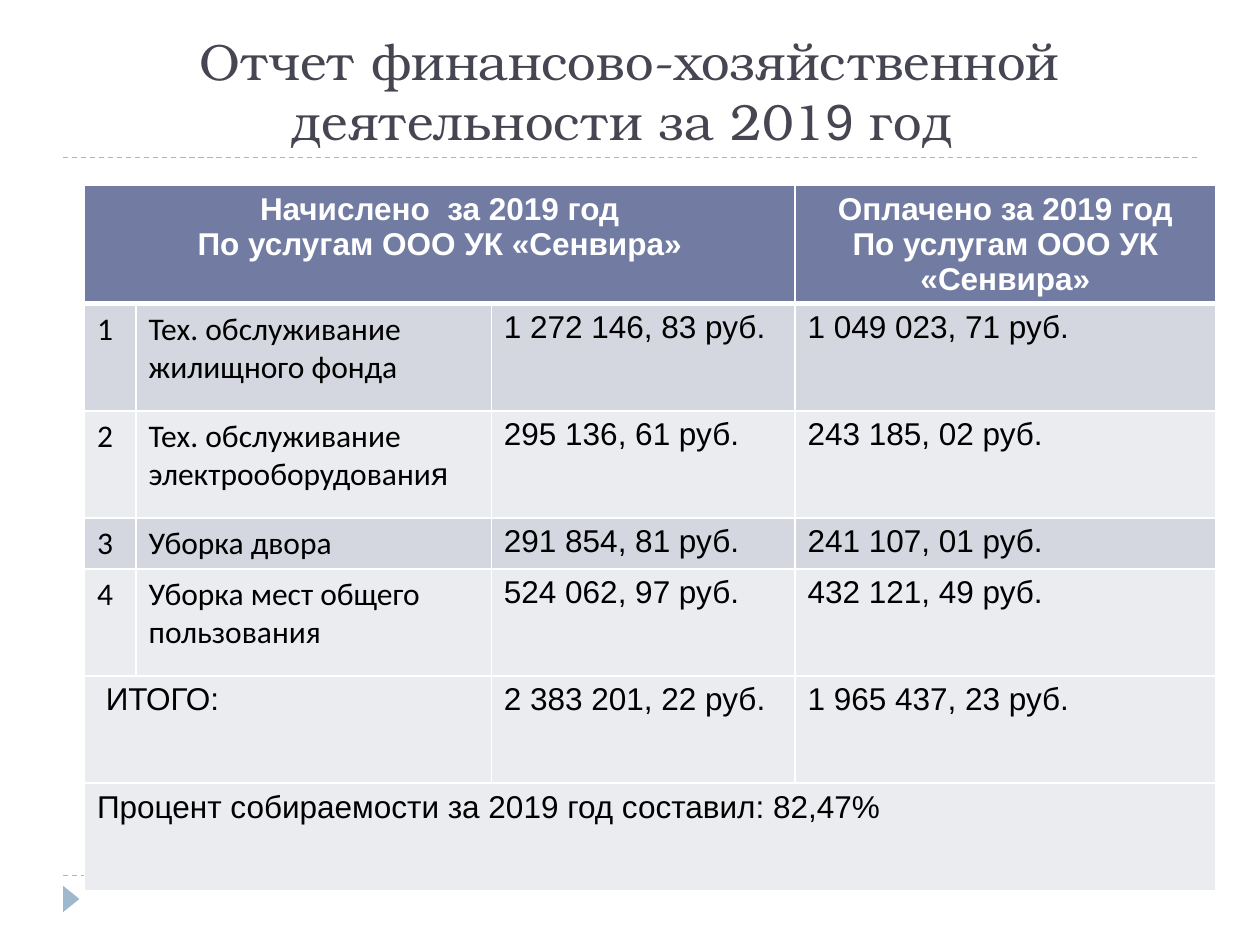
from dataclasses import dataclass

from lxml.etree import SubElement
from pptx import Presentation
from pptx.dml.color import RGBColor
from pptx.enum.dml import MSO_LINE
from pptx.enum.shapes import MSO_CONNECTOR, MSO_SHAPE
from pptx.enum.text import MSO_ANCHOR, MSO_AUTO_SIZE, PP_ALIGN
from pptx.oxml.ns import qn
from pptx.util import Inches, Pt


@dataclass(frozen=True)
class Theme:
    """Colours, fonts and type sizes of the slide."""
    ink: str = "464653"
    accent: str = "9FB8CD"
    header: str = "727CA3"
    band_dark: str = "D5D7E0"
    band_light: str = "EBECF0"
    white: str = "FFFFFF"
    black: str = "000000"
    title_font: str = "TeX Gyre Bonum"
    figure_font: str = "Arial"
    label_font: str = "Calibri"
    title_size: float = 29
    table_size: float = 18
    rule_width: float = 0.75
    border: float = 1
    header_border: float = 3


THEME = Theme()
COLUMNS = [0.41, 2.82, 2.41, 3.34]
ROWS = [0.59, 0.85, 0.85, 0.37, 0.85, 0.85, 0.85]
COMPANY = "По услугам ООО УК «Сенвира»"
TITLE = [
    ("Отчет финансово-хозяйственной деятельности за 201", THEME.title_font),
    ("9", THEME.figure_font),
    (" год ", THEME.title_font),
]
SERVICES = [
    ("Тех. обслуживание жилищного фонда", "1 272 146, 83 руб.", "1 049 023, 71 руб."),
    ("Тех. обслуживание электрооборудования", "295 136, 61 руб.", "243 185, 02 руб."),
    ("Уборка двора", "291 854, 81 руб.", "241 107, 01 руб."),
    ("Уборка мест общего пользования", "524 062, 97 руб.", "432 121, 49 руб."),
]


def rgb(value):
    """Turn a hex string into a colour."""
    return RGBColor.from_string(value)


def style_run(run, font, size, colour, bold=False):
    """Format one run of text."""
    run.font.name = font
    run.font.size = Pt(size)
    run.font.bold = bold
    run.font.color.rgb = rgb(colour)


def add_rule(slide, left, top, width):
    """Draw a dashed horizontal rule."""
    rule = slide.shapes.add_connector(
        MSO_CONNECTOR.STRAIGHT, Inches(left), Inches(top), Inches(left + width), Inches(top))
    rule.line.color.rgb = rgb(THEME.accent)
    rule.line.width = Pt(THEME.rule_width)
    rule.line.dash_style = MSO_LINE.DASH
    SubElement(rule._element.spPr, qn("a:effectLst"))


def add_page_marker(slide, left, top, width, height):
    """Draw the triangle that points right in the footer."""
    marker = slide.shapes.add_shape(
        MSO_SHAPE.ISOSCELES_TRIANGLE, Inches(left), Inches(top), Inches(width), Inches(height))
    marker.rotation = 90
    marker.shadow.inherit = False
    marker.fill.solid()
    marker.fill.fore_color.rgb = rgb(THEME.accent)
    marker.line.fill.background()


def place_title(slide, left, top, width, height):
    """Fill and position the title placeholder."""
    title = slide.shapes.title
    title.left, title.top = Inches(left), Inches(top)
    title.width, title.height = Inches(width), Inches(height)
    frame = title.text_frame
    frame.word_wrap = True
    frame.auto_size = MSO_AUTO_SIZE.NONE
    frame.vertical_anchor = MSO_ANCHOR.BOTTOM
    paragraph = frame.paragraphs[0]
    paragraph.alignment = PP_ALIGN.CENTER
    for words, font in TITLE:
        run = paragraph.add_run()
        run.text = words
        style_run(run, font, THEME.title_size, THEME.ink)


def set_borders(cell, row):
    """Draw white borders, thicker below the header row."""
    properties = cell._tc.get_or_add_tcPr()
    widths = {"a:lnL": THEME.border, "a:lnR": THEME.border,
              "a:lnT": THEME.header_border if row == 1 else THEME.border,
              "a:lnB": THEME.header_border if row == 0 else THEME.border}
    for position, (side, width) in enumerate(widths.items()):
        edge = SubElement(properties, qn(side), w=str(Pt(width)))
        SubElement(SubElement(edge, qn("a:solidFill")), qn("a:srgbClr"), val=THEME.white)
        properties.insert(position, edge)


def write_cell(cell, text, font=THEME.figure_font, header=False):
    """Write and format the text of a cell."""
    cell.text_frame.text = text
    for paragraph in cell.text_frame.paragraphs:
        paragraph.alignment = PP_ALIGN.CENTER if header else PP_ALIGN.LEFT
        for run in paragraph.runs:
            style_run(run, font, THEME.table_size,
                      THEME.white if header else THEME.black, header)


def add_report_table(slide, left, top, width, height):
    """Build the table of charges and payments."""
    table = slide.shapes.add_table(
        len(ROWS), len(COLUMNS), Inches(left), Inches(top), Inches(width), Inches(height)).table
    table.horz_banding = False
    for column, size in zip(table.columns, COLUMNS):
        column.width = Inches(size)
    for row, size in zip(table.rows, ROWS):
        row.height = Inches(size)

    total_row, rate_row = len(ROWS) - 2, len(ROWS) - 1
    for row, last_column in ((0, 2), (total_row, 1), (rate_row, 3)):
        table.cell(row, 0).merge(table.cell(row, last_column))

    fills = [THEME.header] + [THEME.band_dark, THEME.band_light] * 2 + [THEME.band_light] * 2
    for row, fill in enumerate(fills):
        for column in range(len(COLUMNS)):
            cell = table.cell(row, column)
            cell.fill.solid()
            cell.fill.fore_color.rgb = rgb(fill)
            set_borders(cell, row)

    write_cell(table.cell(0, 0), f"Начислено  за 2019 год\n{COMPANY}", header=True)
    write_cell(table.cell(0, 3), f"Оплачено за 2019 год\n{COMPANY}", header=True)
    for number, (service, charged, paid) in enumerate(SERVICES, start=1):
        write_cell(table.cell(number, 0), str(number), THEME.label_font)
        write_cell(table.cell(number, 1), service, THEME.label_font)
        write_cell(table.cell(number, 2), charged)
        write_cell(table.cell(number, 3), paid)

    equipment = table.cell(2, 1).text_frame.paragraphs[0]
    equipment.runs[0].text = SERVICES[1][0][:-1]
    ending = equipment.add_run()
    ending.text = SERVICES[1][0][-1]
    style_run(ending, THEME.figure_font, THEME.table_size, THEME.black)

    write_cell(table.cell(total_row, 0), " ИТОГО:")
    write_cell(table.cell(total_row, 2), "2 383 201, 22 руб.")
    write_cell(table.cell(total_row, 3), "1 965 437, 23 руб.")
    write_cell(table.cell(rate_row, 0), "Процент собираемости за 2019 год составил: 82,47%")


def main():
    """Build and save the slide."""
    presentation = Presentation()
    presentation.slide_width, presentation.slide_height = Inches(10), Inches(7.5)
    slide = presentation.slides.add_slide(presentation.slide_layouts[5])
    for top in (6.95, 1.25):
        add_rule(slide, 0.5, top, 9)
    add_page_marker(slide, 0.46, 7.07, 0.21, 0.13)
    place_title(slide, 0.5, 0.25, 9, 1)
    add_report_table(slide, 0.67, 1.47, sum(COLUMNS), sum(ROWS))
    presentation.save("out.pptx")


if __name__ == "__main__":
    main()
